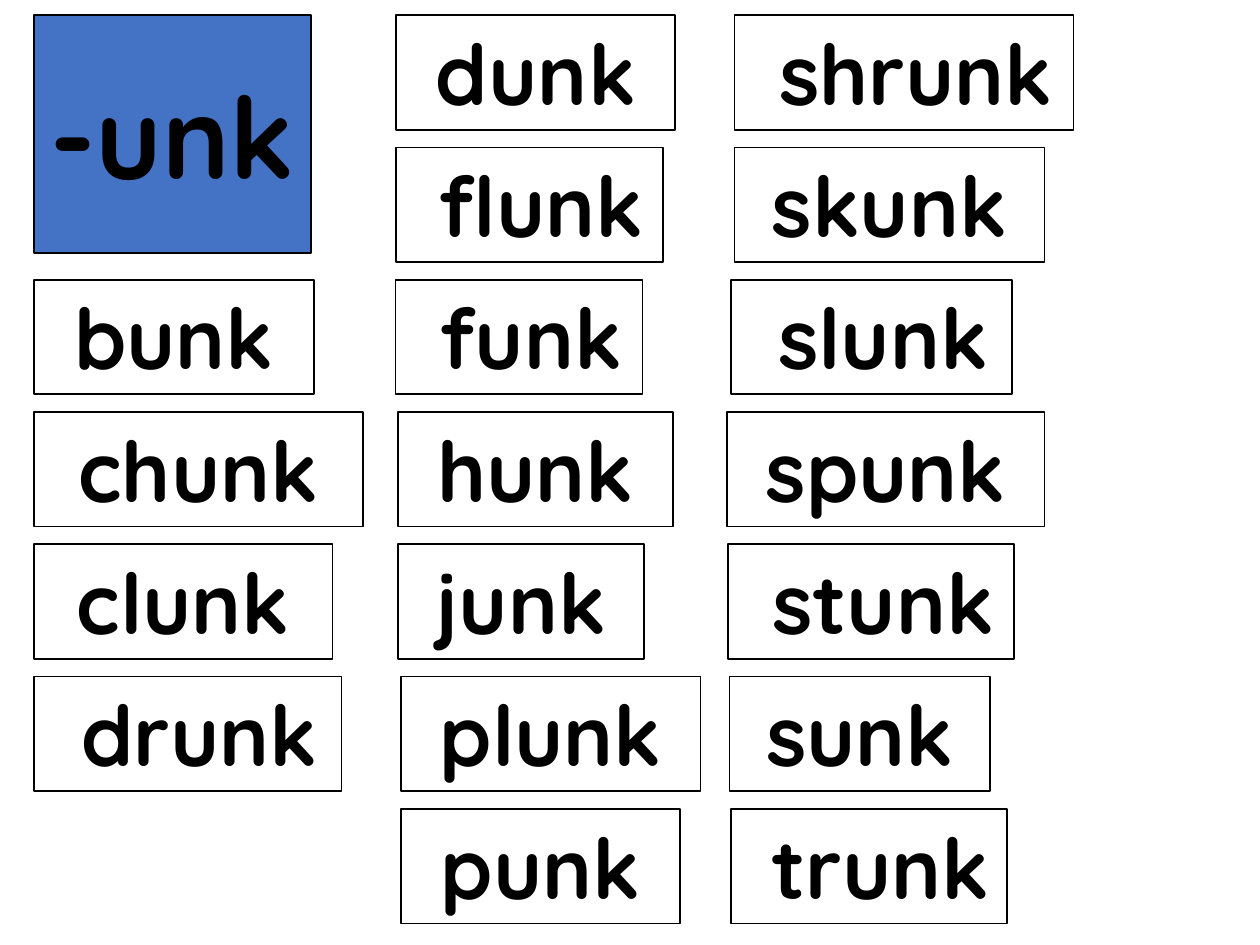
from pptx import Presentation
from pptx.dml.color import RGBColor
from pptx.enum.shapes import MSO_SHAPE
from pptx.enum.text import MSO_ANCHOR, MSO_AUTO_SIZE, PP_ALIGN
from pptx.util import Inches, Pt

FONT = "Quicksand"
CARD_HEIGHT = 0.91
ROW_PITCH = 1.05

# Each column: top of its first card, then (word, left, width) per card
COLUMNS = [
    (2.22, [("bunk", 0.27, 2.22), ("chunk", 0.27, 2.61),
            ("clunk", 0.27, 2.37), ("drunk", 0.27, 2.44)]),
    (0.12, [("dunk", 3.14, 2.22), ("flunk", 3.14, 2.12),
            ("funk", 3.14, 1.96), ("hunk", 3.16, 2.18),
            ("junk", 3.16, 1.95), ("plunk", 3.18, 2.38),
            ("punk", 3.18, 2.22)]),
    (0.12, [("shrunk", 5.83, 2.69), ("skunk", 5.83, 2.46),
            ("slunk", 5.8, 2.23), ("spunk", 5.77, 2.52),
            ("stunk", 5.78, 2.27), ("sunk", 5.79, 2.07),
            ("trunk", 5.8, 2.19)]),
]


def color(value):
    return RGBColor.from_string(value)


def style_box(shape, text, size, fill):
    """Fill and outline a box and set its bold centred text."""
    shape.fill.solid()
    shape.fill.fore_color.rgb = color(fill)
    shape.line.color.rgb = color("000000")
    shape.line.width = Pt(1)
    paragraph = shape.text_frame.paragraphs[0]
    paragraph.text = text
    paragraph.alignment = PP_ALIGN.CENTER
    font = paragraph.font
    font.name = FONT
    font.size = Pt(size)
    font.bold = True
    font.color.rgb = color("000000")


def add_title(slide, left, top, width, height):
    """Place the word-family heading."""
    title = slide.shapes.title
    title.left, title.top = Inches(left), Inches(top)
    title.width, title.height = Inches(width), Inches(height)
    style_box(title, "-unk", 65, "4472C4")
    frame = title.text_frame
    frame.word_wrap = True
    frame.auto_size = MSO_AUTO_SIZE.NONE
    frame.vertical_anchor = MSO_ANCHOR.MIDDLE


def add_card(slide, word, left, top, width, height):
    """Place one word card."""
    card = slide.shapes.add_shape(MSO_SHAPE.RECTANGLE, Inches(left),
                                  Inches(top), Inches(width), Inches(height))
    card.shadow.inherit = False
    style_box(card, f" {word} ", 48, "FFFFFF")
    frame = card.text_frame
    frame.word_wrap = False
    frame.auto_size = MSO_AUTO_SIZE.SHAPE_TO_FIT_TEXT
    frame.vertical_anchor = MSO_ANCHOR.TOP


def add_column(slide, top, cards):
    """Stack word cards at an equal pitch."""
    for row, (word, left, width) in enumerate(cards):
        add_card(slide, word, left, top + row * ROW_PITCH, width, CARD_HEIGHT)


def main():
    presentation = Presentation()
    presentation.slide_width = Inches(10)
    presentation.slide_height = Inches(7.5)
    title_only = presentation.slide_layouts[5]
    slide = presentation.slides.add_slide(title_only)

    add_title(slide, 0.27, 0.12, 2.2, 1.89)
    for top, cards in COLUMNS:
        add_column(slide, top, cards)

    presentation.save("out.pptx")


if __name__ == "__main__":
    main()
